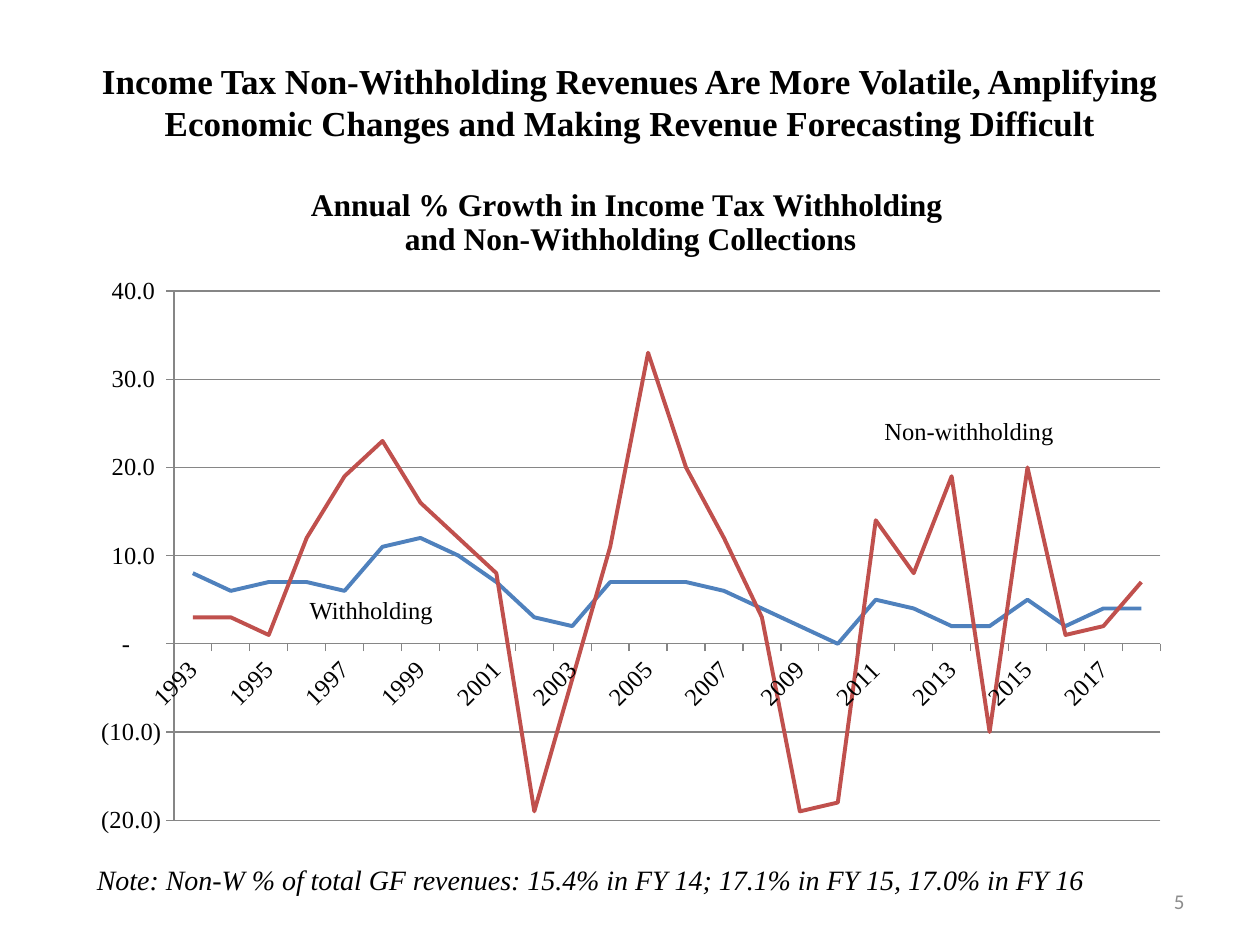
"""Build a slide with a line chart of income tax withholding and non-withholding growth."""
from dataclasses import dataclass

from lxml import etree
from pptx import Presentation
from pptx.chart import data as chart_data
from pptx.dml.color import RGBColor
from pptx.enum import chart as chart_enum, text
from pptx.oxml import parse_xml
from pptx.oxml.ns import nsdecls, qn
from pptx.util import Inches, Pt

COLORS = {"text": "000000", "number": "8C8C8C", "grid": "868686",
          "withholding": "4F81BD", "non_withholding": "C0504D"}
SERIF = "Times New Roman"
NUMBER_FORMAT = '_(* #,##0.0_);_(* \\(#,##0.0\\);_(* "-"??_);_(@_)'
TITLE = ("Income Tax Non-Withholding Revenues Are More Volatile, "
         "Amplifying Economic Changes and Making Revenue Forecasting Difficult")
CHART_TITLE = ("Annual % Growth in Income Tax Withholding", " and Non-Withholding Collections")
CHART_BOX = (0.57, 1.29, 8.81, 5.44)
PLOT_BOX = (0.81, 1.02, 7.83, 4.2)
YEARS = range(1993, 2019)


@dataclass
class Series:
    name: str
    color: str
    values: tuple


@dataclass
class Label:
    words: str
    box: tuple
    size: int
    font: str = SERIF
    color: str = "text"
    italic: bool = False
    wrap: bool = False
    align: text.PP_ALIGN = text.PP_ALIGN.LEFT
    anchor: text.MSO_ANCHOR = text.MSO_ANCHOR.TOP


SERIES = [
    Series("Withholding", "withholding",
           (8, 6, 7, 7, 6, 11, 12, 10, 7, 3, 2, 7, 7,
            7, 6, 4, 2, 0, 5, 4, 2, 2, 5, 2, 4, 4)),
    Series("Non-withholding", "non_withholding",
           (3, 3, 1, 12, 19, 23, 16, 12, 8, -19, -4, 11, 33,
            20, 12, 3, -19, -18, 14, 8, 19, -10, 20, 1, 2, 7)),
]
LABELS = [
    Label("5", (7.17, 6.95, 2.33, 0.4), 12, "Calibri", "number", wrap=True,
          align=text.PP_ALIGN.RIGHT, anchor=text.MSO_ANCHOR.MIDDLE),
    Label("Note: Non-W % of total GF revenues: 15.4% in FY 14; 17.1% in FY 15, 17.0% in FY 16",
          (0.67, 6.8, 8.09, 0.37), 16, italic=True),
    Label("Non-withholding", (6.92, 3.25, 1.55, 0.34), 14),
    Label("Withholding", (2.36, 4.67, 1.19, 0.34), 14),
]


def rgb(name: str) -> RGBColor:
    """Return a named colour."""
    return RGBColor.from_string(COLORS[name])


def set_font(font, size: int, name: str = SERIF, color: str = "text",
             bold: bool = False, italic: bool = False) -> None:
    """Format a font."""
    font.name, font.size, font.bold, font.italic = name, Pt(size), bold, italic
    font.color.rgb = rgb(color)


def add_title(slide) -> None:
    """Fill and place the title placeholder."""
    title = slide.shapes.title
    title.left, title.top, title.width, title.height = map(Inches, (0.5, 0.42, 9, 0.62))
    frame = title.text_frame
    frame.text = TITLE
    frame.word_wrap = True
    frame.auto_size = text.MSO_AUTO_SIZE.NONE
    frame.vertical_anchor = text.MSO_ANCHOR.TOP
    paragraph = frame.paragraphs[0]
    paragraph.alignment = text.PP_ALIGN.CENTER
    set_font(paragraph.font, 20, bold=True)


def add_label(slide, label: Label) -> None:
    """Add a text box."""
    frame = slide.shapes.add_textbox(*map(Inches, label.box)).text_frame
    frame.text = label.words
    frame.word_wrap = label.wrap
    frame.vertical_anchor = label.anchor
    paragraph = frame.paragraphs[0]
    paragraph.alignment = label.align
    set_font(paragraph.font, label.size, label.font, label.color, italic=label.italic)


def add_chart_title(chart) -> None:
    """Write the two-line chart title."""
    title = chart.chart_title
    frame = title.text_frame
    frame.text = "\n".join(CHART_TITLE)
    for paragraph in frame.paragraphs:
        paragraph.alignment = text.PP_ALIGN.CENTER
        set_font(paragraph.font, 18, bold=True)
    title.include_in_layout = False


def format_axes(chart) -> None:
    """Set scales, ticks, gridlines and tick labels."""
    years, growth = chart.category_axis, chart.value_axis
    for axis in (years, growth):
        axis.format.line.color.rgb = rgb("grid")
        axis.major_tick_mark = chart_enum.XL_TICK_MARK.OUTSIDE
        axis.minor_tick_mark = chart_enum.XL_TICK_MARK.NONE
        axis.tick_label_position = chart_enum.XL_TICK_LABEL_POSITION.NEXT_TO_AXIS
        set_font(axis.tick_labels.font, 14)
    years.has_major_gridlines = False
    years._element.find(qn("c:txPr")).find(qn("a:bodyPr")).set("rot", "-2700000")
    skip = etree.Element(qn("c:tickLblSkip"), val="2")
    years._element.find(qn("c:noMultiLvlLbl")).addprevious(skip)
    growth.minimum_scale, growth.maximum_scale, growth.major_unit = -20, 40, 10
    growth.has_major_gridlines = True
    growth.major_gridlines.format.line.color.rgb = rgb("grid")
    growth.tick_labels.number_format = NUMBER_FORMAT
    growth.tick_labels.number_format_is_linked = False


def place_plot(chart) -> None:
    """Fix the inner plot area within the chart."""
    area = chart._chartSpace.chart.plotArea
    for layout in area.findall(qn("c:layout")):
        area.remove(layout)
    sizes = "".join(f'<c:{key} val="{length / CHART_BOX[2 + index % 2]}"/>'
                    for index, (key, length) in enumerate(zip("xywh", PLOT_BOX)))
    area.insert(0, parse_xml(
        f'<c:layout {nsdecls("c")}><c:manualLayout><c:layoutTarget val="inner"/>'
        f'<c:xMode val="edge"/><c:yMode val="edge"/>{sizes}</c:manualLayout></c:layout>'))


def add_growth_chart(slide) -> None:
    """Add the line chart."""
    table = chart_data.CategoryChartData(number_format="0.0")
    table.categories = [str(year) for year in YEARS]
    for series in SERIES:
        table.add_series(series.name, series.values)
    chart = slide.shapes.add_chart(chart_enum.XL_CHART_TYPE.LINE,
                                   *map(Inches, CHART_BOX), table).chart
    set_font(chart.font, 14)
    chart.has_legend = False
    add_chart_title(chart)
    format_axes(chart)
    place_plot(chart)
    plot = chart.plots[0]
    plot.vary_by_categories = False
    for line, series in zip(plot.series, SERIES):
        line.smooth = False
        line.marker.style = chart_enum.XL_MARKER_STYLE.NONE
        line.format.line.color.rgb = rgb(series.color)
        line.format.line.width = Pt(2.25)


def main() -> None:
    """Build and save the presentation."""
    presentation = Presentation()
    presentation.slide_width, presentation.slide_height = Inches(10), Inches(7.5)
    slide = presentation.slides.add_slide(presentation.slide_layouts[5])
    add_title(slide)
    add_growth_chart(slide)
    for label in LABELS:
        add_label(slide, label)
    presentation.save("out.pptx")


if __name__ == "__main__":
    main()
